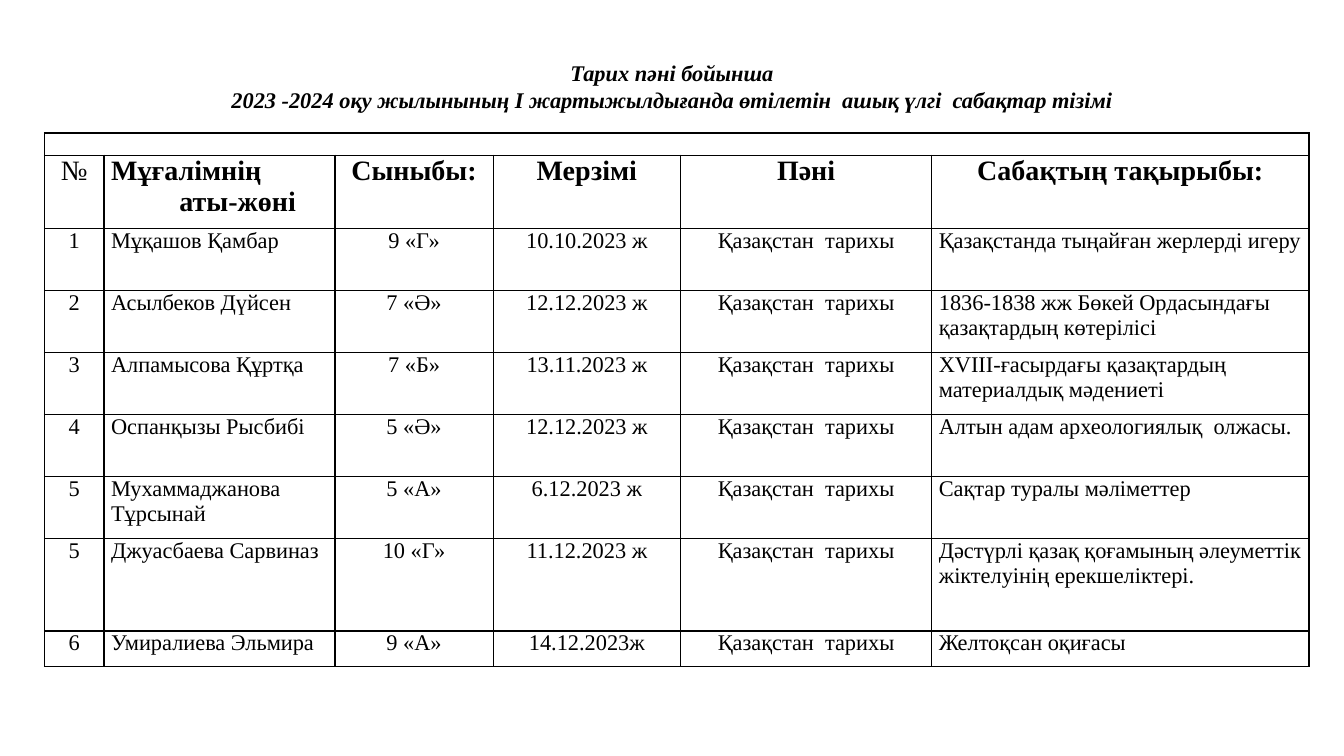
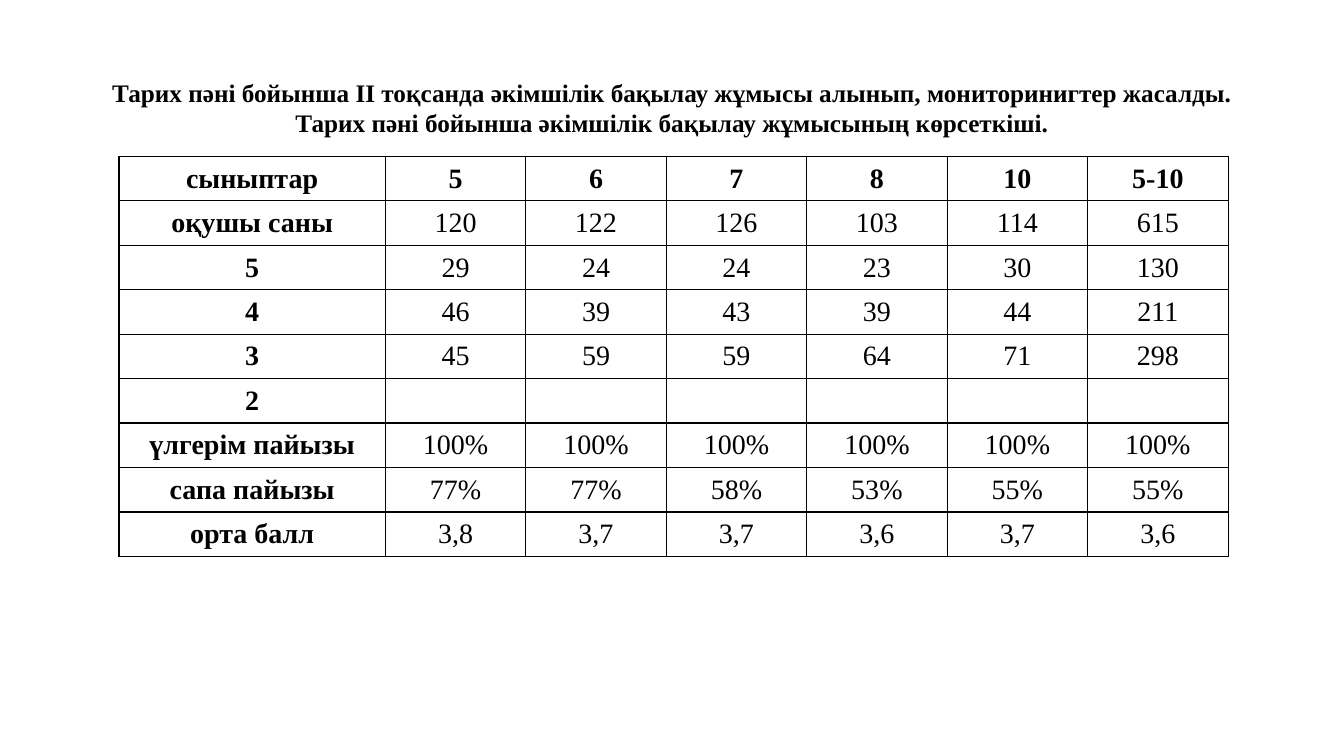
import pptx
import pptx.util
import pptx.dml.color
import pptx.enum.text
import pptx.oxml
import pptx.oxml.ns
from lxml import etree

Cm, Pt = pptx.util.Cm, pptx.util.Pt
CENTER = pptx.enum.text.PP_ALIGN.CENTER
LEFT = pptx.enum.text.PP_ALIGN.LEFT
TOP = pptx.enum.text.MSO_ANCHOR.TOP
MIDDLE = pptx.enum.text.MSO_ANCHOR.MIDDLE
FONT = "Times New Roman"
INK = "000000"
SLIDE_W, SLIDE_H = 33.87, 19.05

LESSON_COLS = [1.5, 5.82, 3.99, 4.72, 6.33, 9.51]
LESSON_ROWS = [0.56, 1.85] + [1.56] * 5 + [2.34, 0.89]
SUBJECT = "Қазақстан  тарихы"
LESSON_HEAD = ["№", "Мұғалімнің\nаты-жөні", "Сыныбы:", "Мерзімі", "Пәні",
               "Сабақтың тақырыбы:"]
LESSONS = [
    ("1", "Мұқашов Қамбар", "9 «Г»", "10.10.2023 ж",
     "Қазақстанда тыңайған жерлерді игеру"),
    ("2", "Асылбеков Дүйсен", "7 «Ә»", "12.12.2023 ж",
     "1836-1838 жж Бөкей Ордасындағы қазақтардың көтерілісі"),
    ("3", "Алпамысова Құртқа", "7 «Б»", "13.11.2023 ж",
     "XVIII-ғасырдағы қазақтардың материалдық мәдениеті"),
    ("4", "Оспанқызы Рысбибі", "5 «Ә»", "12.12.2023 ж",
     "Алтын адам археологиялық  олжасы."),
    ("5", "Мухаммаджанова Тұрсынай", "5 «А»", "6.12.2023 ж",
     "Сақтар туралы мәліметтер"),
    ("5", "Джуасбаева Сарвиназ", "10 «Г»", "11.12.2023 ж",
     "Дәстүрлі қазақ қоғамының әлеуметтік жіктелуінің ерекшеліктері."),
    ("6", "Умиралиева Эльмира", "9 «А»", "14.12.2023ж",
     "Желтоқсан оқиғасы"),
]

RESULT_COLS = [6.71] + [3.54] * 6
RESULTS = [
    ["сыныптар", "5", "6", "7", "8", "10", "5-10"],
    ["оқушы саны", "120", "122", "126", "103", "114", "615"],
    ["5", "29", "24", "24", "23", "30", "130"],
    ["4", "46", "39", "43", "39", "44", "211"],
    ["3", "45", "59", "59", "64", "71", "298"],
    ["2"] + [""] * 6,
    ["үлгерім пайызы"] + ["100%"] * 6,
    ["сапа пайызы", "77%", "77%", "58%", "53%", "55%", "55%"],
    ["орта балл", "3,8", "3,7", "3,7", "3,6", "3,7", "3,6"],
]


def color(value):
    return pptx.dml.color.RGBColor.from_string(value)


def write(tf, text, size, align=CENTER, **fmt):
    """Fill a text frame, one paragraph per line."""
    for i, line in enumerate(text.split("\n")):
        p = tf.paragraphs[0] if i == 0 else tf.add_paragraph()
        p.alignment = align
        if not line:
            p._p.get_or_add_endParaRPr().set("sz", str(size * 100))
            continue
        r = p.add_run()
        r.text = line
        for name, value in dict(name=FONT, size=Pt(size), **fmt).items():
            setattr(r.font, name, value)
        r.font.color.rgb = color(INK)


def title(s, box, text, size, **fmt):
    tf = s.shapes.add_textbox(*map(Cm, box)).text_frame
    tf.word_wrap = True
    tf.vertical_anchor = MIDDLE
    write(tf, text, size, bold=True, **fmt)


def border(cell):
    tcPr = cell._tc.get_or_add_tcPr()
    for i, side in enumerate(("lnL", "lnR", "lnT", "lnB")):
        ln = pptx.oxml.parse_xml(
            f'<a:{side} {pptx.oxml.ns.nsdecls("a")} w="12700"><a:solidFill>'
            f'<a:srgbClr val="{INK}"/></a:solidFill></a:{side}>')
        tcPr.insert(i, ln)


def grid(s, left, top, cols, rows, inset, anchor):
    """Add a plain ruled table and return it."""
    table = s.shapes.add_table(len(rows), len(cols), Cm(left), Cm(top),
                               Cm(sum(cols)), Cm(sum(rows))).table
    table.first_row = table.horz_banding = False
    for col, width in zip(table.columns, cols):
        col.width = Cm(width)
    for row, height in zip(table.rows, rows):
        row.height = Cm(height)
    look = dict(margin_left=Cm(inset), margin_right=Cm(inset), margin_top=0,
                margin_bottom=0, vertical_anchor=anchor)
    for cell in table.iter_cells():
        for name, value in look.items():
            setattr(cell, name, value)
        cell.fill.background()
        border(cell)
    return table


def lesson_table(s, left, top):
    table = grid(s, left, top, LESSON_COLS, LESSON_ROWS, 0.18, TOP)
    # Empty band across the top
    table.cell(0, 0).merge(table.cell(0, len(LESSON_COLS) - 1))
    for c in range(len(LESSON_COLS)):
        write(table.cell(0, c).text_frame, "", 8)
    # Headings, the second line of the name heading indented
    for c, text in enumerate(LESSON_HEAD):
        write(table.cell(1, c).text_frame, text, 20,
              LEFT if c == 1 else CENTER, bold=c > 0)
    second = table.cell(1, 1).text_frame.paragraphs[1]
    second._p.get_or_add_pPr().set("marL", str(Cm(1.72)))
    # Lessons
    for r, (*facts, topic) in enumerate(LESSONS, 2):
        for c, text in enumerate([*facts, SUBJECT, topic]):
            write(table.cell(r, c).text_frame, text, 16,
                  LEFT if c in (1, 5) else CENTER, bold=False)


def result_table(s, left, top):
    table = grid(s, left, top, RESULT_COLS, [1.12] * len(RESULTS), 0.03, MIDDLE)
    for r, values in enumerate(RESULTS):
        for c, text in enumerate(values):
            write(table.cell(r, c).text_frame, text, 20, bold=r == 0 or c == 0)


def main():
    prs = pptx.Presentation()
    prs.slide_width, prs.slide_height = Cm(SLIDE_W), Cm(SLIDE_H)
    blank = prs.slide_layouts[6]

    # Open lessons
    s = prs.slides.add_slide(blank)
    lesson_table(s, 1.12, 3.35)
    title(s, (0, 1.35, SLIDE_W, 1.63),
          "Тарих пәні бойынша\n2023 -2024 оқу жылынының І жартыжылдығанда "
          "өтілетін  ашық үлгі  сабақтар тізімі", 16, italic=True)

    # Test results
    s = prs.slides.add_slide(blank)
    title(s, (0, 1.8, SLIDE_W, 1.8),
          "Тарих пәні бойынша ІІ тоқсанда әкімшілік бақылау жұмысы алынып, "
          "мониторинигтер жасалды.\nТарих пәні бойынша әкімшілік бақылау "
          "жұмысының көрсеткіші.", 18)
    result_table(s, 3, 3.94)

    prs.save("out.pptx")


if __name__ == "__main__":
    main()
